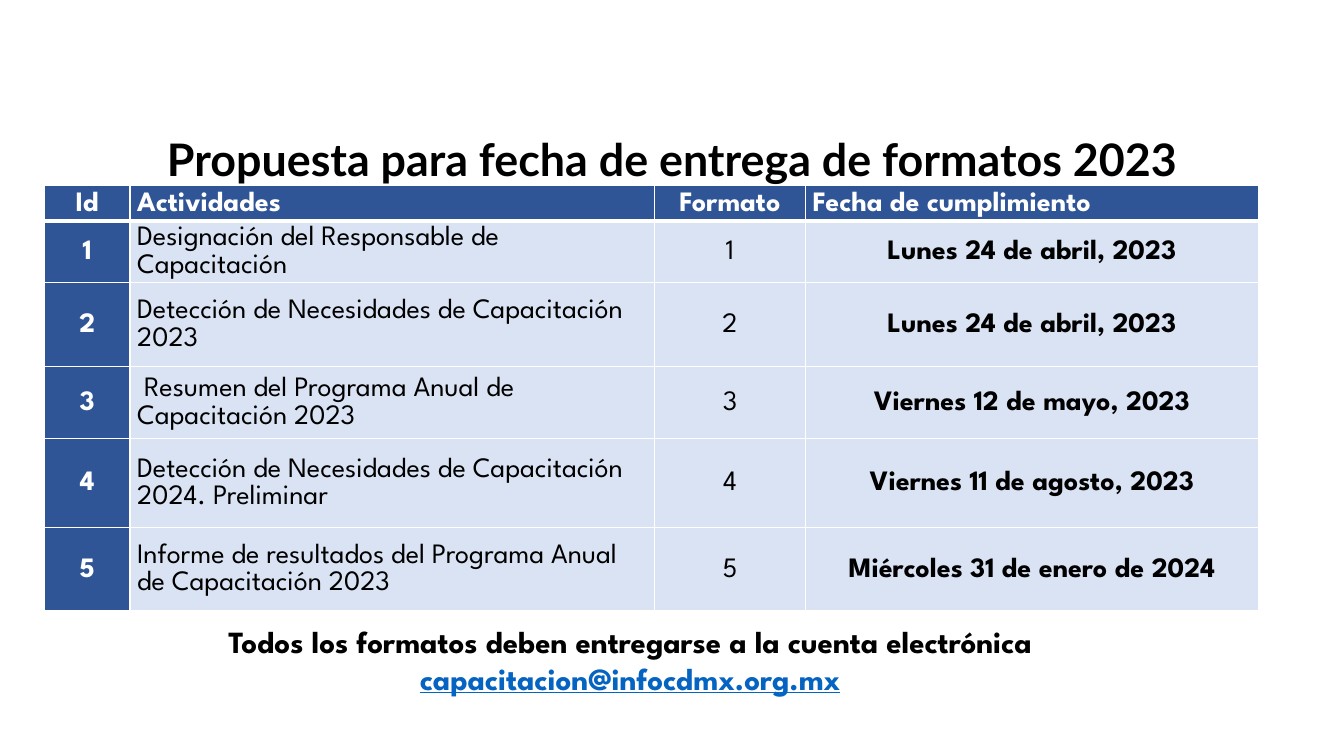
from lxml.etree import SubElement
from pptx import Presentation
from pptx.dml.color import RGBColor
from pptx.enum.text import MSO_ANCHOR as Anchor, MSO_AUTO_SIZE as AutoSize, PP_ALIGN as Align
from pptx.oxml.ns import qn
from pptx.util import Pt

PX = 9144
WHITE = RGBColor(0xFF, 0xFF, 0xFF)
BLACK = RGBColor(0, 0, 0)
NAVY = RGBColor(0x2F, 0x55, 0x97)
PALE = RGBColor(0xDA, 0xE3, 0xF3)
LINK = RGBColor(0x05, 0x63, 0xC1)


def write(paragraph, text, size=20, font="League Spartan", color=BLACK, bold=True,
          underline=False, align=Align.CENTER, spacing=None, after=0):
    paragraph.alignment = align
    paragraph.line_spacing = spacing
    paragraph.space_before = Pt(0)
    paragraph.space_after = Pt(after)
    run = paragraph.add_run()
    run.text = text
    run.font.size = Pt(size)
    run.font.name = font
    run.font.color.rgb = color
    run.font.bold = bold
    run.font.underline = underline


def add_borders(cell, **widths):
    properties = cell._tc.get_or_add_tcPr()
    for side in "LRTB":
        line = SubElement(properties, qn(f"a:ln{side}"), w=str(Pt(widths.get(side, 1))))
        fill = SubElement(line, qn("a:solidFill"))
        SubElement(fill, qn("a:srgbClr"), val=str(WHITE))


presentation = Presentation()
presentation.slide_width = 1333 * PX
presentation.slide_height = 750 * PX
slide = presentation.slides.add_slide(presentation.slide_layouts[5])

title = slide.shapes.title
title.left, title.top, title.width, title.height = -54 * PX, 132 * PX, 1442 * PX, 44 * PX
title.text_frame.auto_size = AutoSize.NONE
title.text_frame.vertical_anchor = Anchor.TOP
write(title.text_frame.paragraphs[0], "Propuesta para fecha de entrega de formatos 2023",
      size=32, font="Lato", spacing=0.9)

headers = ["Id", "Actividades", "Formato", "Fecha de cumplimiento"]
activities = [
    ("Designación del Responsable de Capacitación", "Lunes 24 de abril, 2023"),
    ("Detección de Necesidades de Capacitación 2023", "Lunes 24 de abril, 2023"),
    (" Resumen del Programa Anual de Capacitación 2023", "Viernes 12 de mayo, 2023"),
    ("Detección de Necesidades de Capacitación 2024. Preliminar", "Viernes 11 de agosto, 2023"),
    ("Informe de resultados del Programa Anual de Capacitación 2023",
     "Miércoles 31 de enero de 2024"),
]
rows = [headers]
for number, (activity, date) in enumerate(activities, start=1):
    rows.append([str(number), activity, str(number), date])

column_widths = [85, 520, 150, 449]
row_heights = [35, 61, 84, 71, 88, 83]
table = slide.shapes.add_table(len(rows), len(headers), 44 * PX, 184 * PX,
                               sum(column_widths) * PX, sum(row_heights) * PX).table
table.first_row = False
table.horz_banding = False
for column, width in zip(table.columns, column_widths):
    column.width = width * PX
for row, height in zip(table.rows, row_heights):
    row.height = height * PX

for row_index, texts in enumerate(rows):
    is_header = row_index == 0
    for column_index, text in enumerate(texts):
        cell = table.cell(row_index, column_index)
        is_dark = is_header or column_index == 0
        is_left = column_index == 1 or (is_header and column_index == 3)
        add_borders(cell, T=3 if row_index == 1 else 1, B=3 if is_header else 1)
        cell.fill.solid()
        cell.fill.fore_color.rgb = NAVY if is_dark else PALE
        cell.vertical_anchor = Anchor.MIDDLE
        cell.margin_left = cell.margin_right = 7 * PX
        cell.margin_top, cell.margin_bottom = 1 * PX, 0
        write(cell.text_frame.paragraphs[0], text,
              color=WHITE if is_dark else BLACK,
              bold=is_dark or column_index == 3,
              align=Align.LEFT if is_left else Align.CENTER,
              spacing=1.07, after=8)

delivery_note = slide.shapes.add_textbox(-34 * PX, 613 * PX, 1318 * PX, 84 * PX).text_frame
delivery_note.word_wrap = True
write(delivery_note.paragraphs[0],
      "Todos los formatos deben entregarse a la cuenta electrónica", size=22)
write(delivery_note.add_paragraph(), "capacitacion@infocdmx.org.mx",
      size=22, color=LINK, underline=True)

presentation.save("out.pptx")
